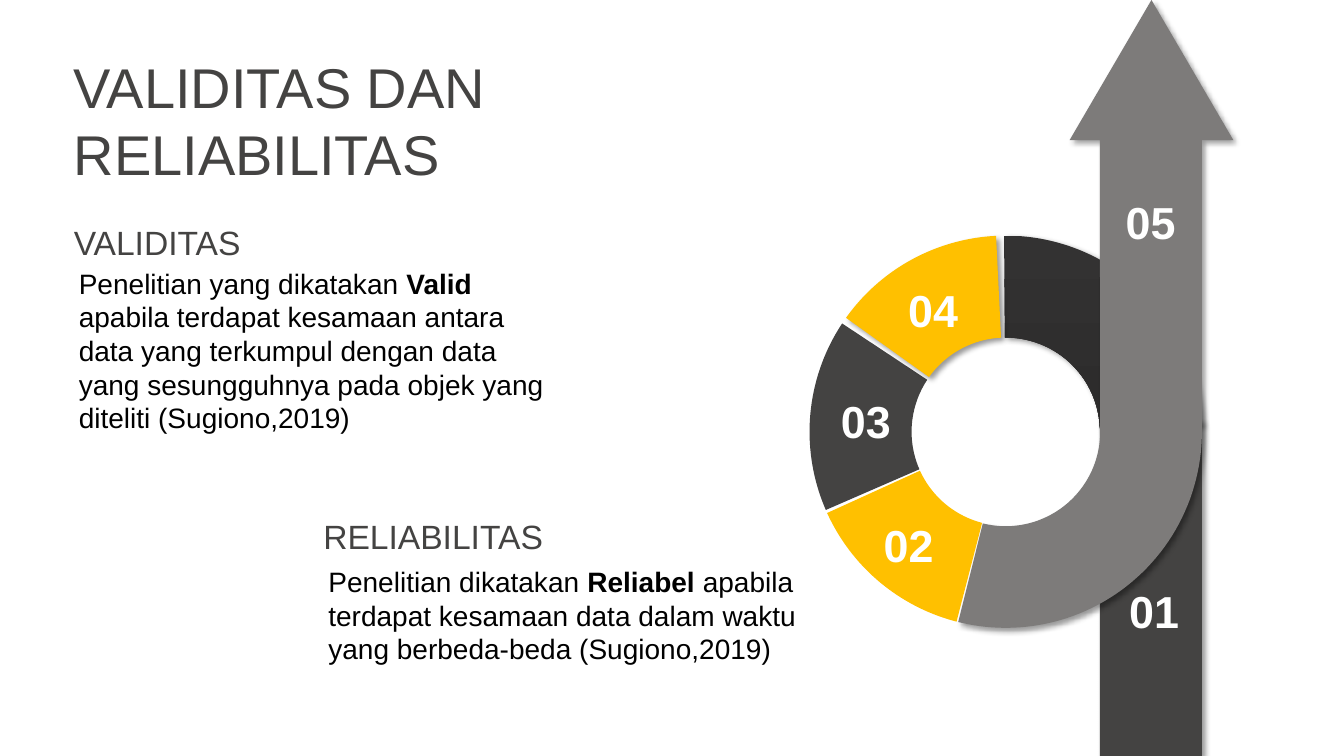
from math import cos, radians, sin

from lxml import etree
from pptx import Presentation
from pptx.dml.color import RGBColor
from pptx.enum.shapes import MSO_SHAPE
from pptx.enum.text import MSO_ANCHOR, PP_ALIGN
from pptx.oxml.ns import qn
from pptx.util import Inches, Pt

ARC, RECT = MSO_SHAPE.BLOCK_ARC, MSO_SHAPE.RECTANGLE
TOP, MIDDLE = MSO_ANCHOR.TOP, MSO_ANCHOR.MIDDLE
LEFT, CENTER = PP_ALIGN.LEFT, PP_ALIGN.CENTER
WHITE = RGBColor(0xFF, 0xFF, 0xFF)
BLACK = RGBColor(0, 0, 0)
DARK = RGBColor(0x44, 0x43, 0x42)
GRAY = RGBColor(0x7D, 0x7B, 0x7A)
YELLOW = RGBColor(0xFF, 0xC0, 0x00)
SHADE = (RGBColor(0x33, 0x32, 0x32), RGBColor(0x22, 0x22, 0x21))

prs = Presentation()
prs.slide_width, prs.slide_height = Inches(13.33), Inches(7.5)
slide = prs.slides.add_slide(prs.slide_layouts[6])
shapes = slide.shapes
CELL = prs.slide_height / 90  # square grid: 160 columns by 90 rows


def finish(sp, color, shadow):
    """Fill a shape, drop its outline and give it a soft shadow if asked."""
    if color:
        sp.fill.solid()
        sp.fill.fore_color.rgb = color
    else:
        sp.fill.gradient()
        sp.fill.gradient_angle = 0
        for stop, shade in zip(sp.fill.gradient_stops, SHADE):
            stop.color.rgb = shade
    sp.line.fill.background()
    sp.shadow.inherit = False
    if shadow:
        effects = sp._element.spPr.find(qn("a:effectLst"))
        outer = etree.SubElement(effects, qn("a:outerShdw"), blurRad=str(Pt(4)),
                                 dist=str(Pt(3)), dir="2700000", rotWithShape="0")
        black = etree.SubElement(outer, qn("a:srgbClr"), val="000000")
        etree.SubElement(black, qn("a:alpha"), val="40000")


def add_text(runs, box, size, color, bold=False, align=LEFT, anchor=TOP, tight=False):
    """Add a text box from (text, bold) runs or a plain string."""
    sp = shapes.add_textbox(*[round(v * CELL) for v in box])
    tf = sp.text_frame
    tf.word_wrap = True
    tf.vertical_anchor = anchor
    if tight:
        tf.margin_left = tf.margin_right = Inches(0.04)
        tf.margin_top = tf.margin_bottom = 0
    p = tf.paragraphs[0]
    p.alignment = align
    for text, strong in [(runs, bold)] if isinstance(runs, str) else runs:
        r = p.add_run()
        r.text = text
        r.font.name, r.font.size, r.font.bold = "Arial", Pt(size), strong
        r.font.color.rgb = color
    return sp


# Ring and road
RING_X, RING_Y, OUTER, INNER = 119.7, 51.4, 23.35, 11.25
ROAD_LEFT, ROAD_RIGHT, HEAD_BASE = 130.9, 143.05, 16.7
ring_box = [round(v * CELL) for v in
            (RING_X - OUTER, RING_Y - OUTER, 2 * OUTER, 2 * OUTER)]


# Rotation, end angle, colour (None for the gradient), shadow
segments = [
    (90, 160.74, None, True),
    (285, 138.31, YELLOW, False),
    (337, 141.9, DARK, False),
    (36, 138.7, YELLOW, True),
]
for i, (rotation, end, color, shadow) in enumerate(segments):
    sp = shapes.add_shape(ARC, *ring_box)
    sp.rotation = rotation
    sp.adjustments[0], sp.adjustments[1], sp.adjustments[2] = 107.7, end, 0.26
    finish(sp, color, shadow)
    if i == 0:
        road = shapes.add_shape(RECT, *[round(v * CELL) for v in (
            ROAD_LEFT, 50.2, ROAD_RIGHT - ROAD_LEFT, 39.8)])
        finish(road, DARK, True)

        sweep = range(0, 105, 2)
        bend = [(RING_X + radius * cos(radians(a)), RING_Y + radius * sin(radians(a)))
                for radius, angles in ((OUTER, sweep), (INNER, reversed(sweep)))
                for a in angles]
        outline = [(137.05, 0), (146.8, HEAD_BASE), (ROAD_RIGHT, HEAD_BASE), *bend,
                   (ROAD_LEFT, HEAD_BASE), (127.3, HEAD_BASE)]
        points = [(round(x * CELL), round(y * CELL)) for x, y in outline]
        builder = shapes.build_freeform(*points[0])
        builder.add_line_segments(points[1:], close=True)
        finish(builder.convert_to_shape(), GRAY, True)

# Step numbers
steps = [(130.7, 68.9), (101.5, 61.1), (96.4, 46.3), (104.4, 33.1), (130.3, 22.6)]
for number, (x, y) in enumerate(steps, 1):
    add_text(f"{number:02}", (x, y, 13.3, 7.7), 32, WHITE, bold=True, align=CENTER)

# Title and definitions
title = add_text("VALIDITAS DAN RELIABILITAS", (7.6, 5.5, 60.1, 17.4), 40, DARK,
                 anchor=MIDDLE)
finish(title, WHITE, False)

definitions = [
    ("VALIDITAS", (8.3, 26.4), (8.2, 31.1, 59.3, 21.4),
     [("Penelitian yang dikatakan ", False), ("Valid ", True),
      ("apabila terdapat kesamaan antara data yang terkumpul dengan data yang "
       "sesungguhnya pada objek yang diteliti (Sugiono,2019)", False)]),
    ("RELIABILITAS", (38, 61.4), (37.9, 66.6, 58.9, 13.3),
     [("Penelitian dikatakan ", False), ("Reliabel ", True),
      ("apabila terdapat kesamaan data dalam waktu yang berbeda-beda "
       "(Sugiono,2019)", False)]),
]
for heading, (x, y), body_box, body in definitions:
    add_text(heading, (x, y, 33.6, 4.8), 24, DARK, anchor=MIDDLE, tight=True)
    add_text(body, body_box, 20, BLACK)

prs.save("out.pptx")
